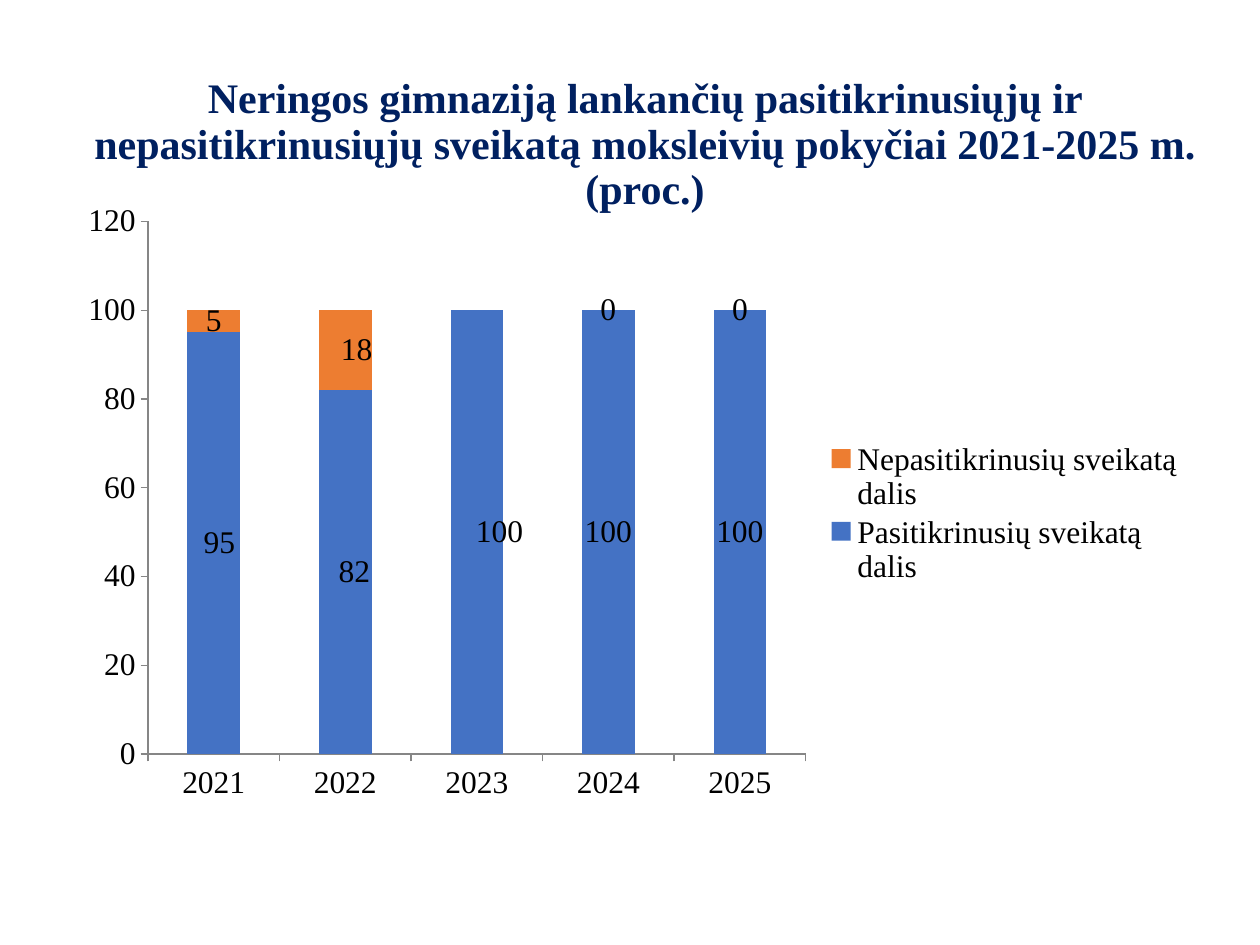
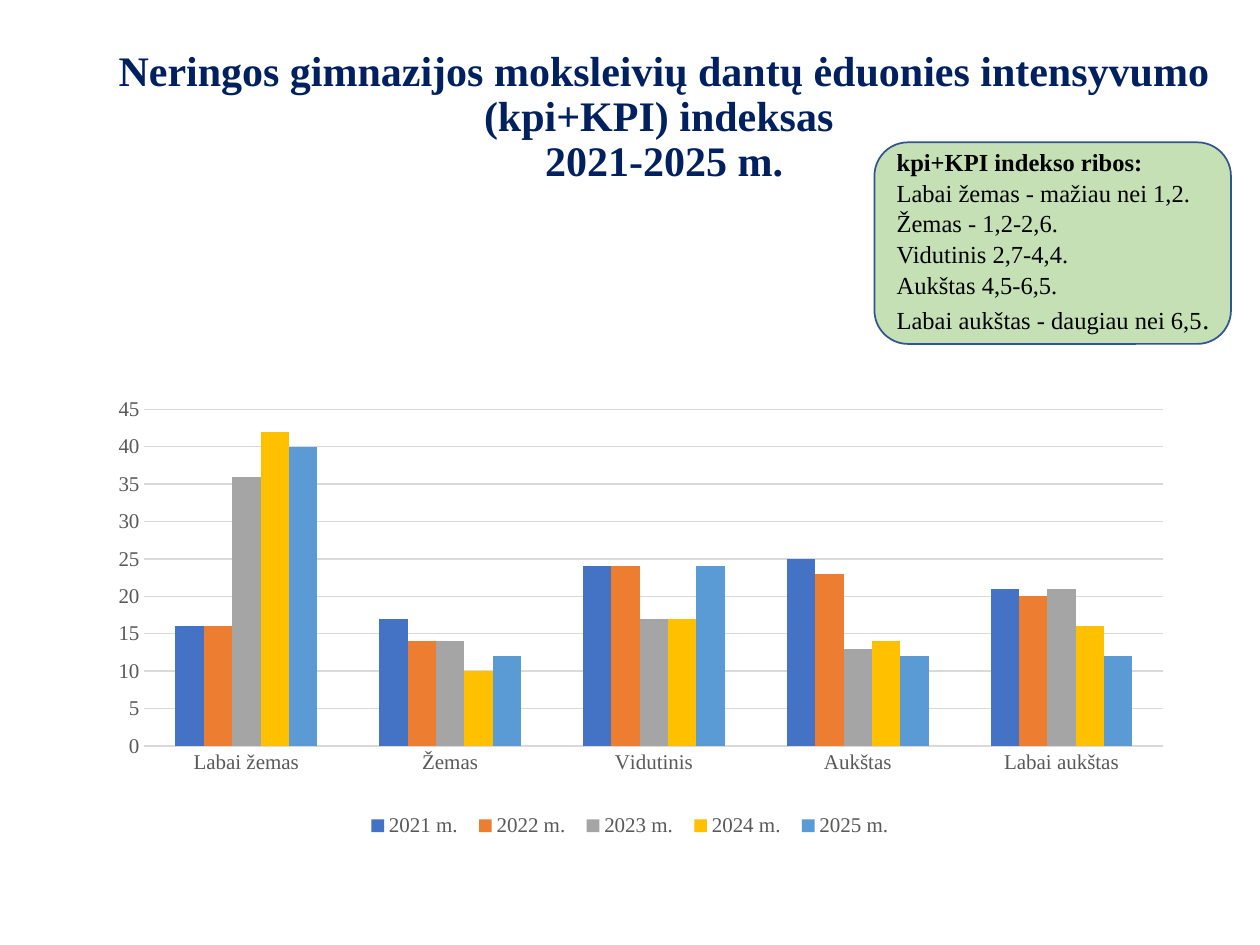
from lxml.etree import SubElement
from pptx import Presentation
from pptx.chart.data import CategoryChartData
from pptx.dml.color import RGBColor
from pptx.enum.chart import XL_CHART_TYPE, XL_LABEL_POSITION, XL_LEGEND_POSITION, XL_TICK_MARK
from pptx.enum.shapes import MSO_SHAPE
from pptx.enum.text import MSO_ANCHOR, MSO_AUTO_SIZE, PP_ALIGN
from pptx.oxml import parse_xml
from pptx.oxml.ns import nsdecls, qn
from pptx.util import Inches, Pt

FONT = "Times New Roman"
NAVY = RGBColor(0x00, 0x20, 0x60)
BLACK = RGBColor(0x00, 0x00, 0x00)
GRAY = RGBColor(0x59, 0x59, 0x59)
AXIS_GRAY = RGBColor(0x86, 0x86, 0x86)
GRID_GRAY = RGBColor(0xD9, 0xD9, 0xD9)
GREEN = RGBColor(0xC5, 0xE0, 0xB4)
BORDER_BLUE = RGBColor(0x32, 0x54, 0x91)
SERIES_COLORS = [
    RGBColor(0x44, 0x72, 0xC4), RGBColor(0xED, 0x7D, 0x31), RGBColor(0xA5, 0xA5, 0xA5),
    RGBColor(0xFF, 0xC0, 0x00), RGBColor(0x5B, 0x9B, 0xD5),
]

CHECKUP_TITLE = ["Neringos gimnaziją lankančių pasitikrinusiųjų ir nepasitikrinusiųjų "
                 "sveikatą moksleivių pokyčiai 2021-2025 m. (proc.)"]
YEARS = ["2021", "2022", "2023", "2024", "2025"]
CHECKUPS = {
    "Pasitikrinusių sveikatą dalis": [95, 82, 100, 100, 100],
    "Nepasitikrinusių sveikatą dalis": [5, 18, 0, 0, 0],
}
LABEL_SHIFTS = [{0: 0.005, 1: 0.008, 2: 0.02}, {1: 0.01}]
HIDDEN_LABEL = (1, 2)

CARIES_TITLE = ["Neringos gimnazijos moksleivių dantų ėduonies intensyvumo (kpi+KPI) indeksas ",
                "2021-2025 m."]
LEVELS = ["Labai žemas", "Žemas", "Vidutinis", "Aukštas", "Labai aukštas"]
CARIES = {
    "2021 m.": [16, 17, 24, 25, 21],
    "2022 m.": [16, 14, 24, 23, 20],
    "2023 m.": [36, 14, 17, 13, 21],
    "2024 m.": [42, 10, 17, 14, 16],
    "2025 m.": [40, 12, 24, 12, 12],
}
LIMITS = [
    [("kpi+KPI indekso ribos:", 14, True)],
    [("Labai žemas - mažiau nei 1,2.", 14, False)],
    [("Žemas - 1,2-2,6.", 14, False)],
    [("Vidutinis 2,7-4,4.", 14, False)],
    [("Aukštas 4,5-6,5.", 14, False)],
    [("Labai aukštas - daugiau nei 6,5", 14, False), (".", 16, False)],
]


def set_font(font, size, color, bold=False):
    font.name, font.size, font.bold = FONT, Pt(size), bold
    font.color.rgb = color


def place(shape, box):
    shape.left, shape.top, shape.width, shape.height = (Inches(v) for v in box)


def add_titled_slide(prs, lines, box):
    s = prs.slides.add_slide(prs.slide_layouts[5])
    place(s.shapes.title, box)
    tf = s.shapes.title.text_frame
    tf.auto_size, tf.vertical_anchor = MSO_AUTO_SIZE.NONE, MSO_ANCHOR.MIDDLE
    p = tf.paragraphs[0]
    p.alignment, p.line_spacing = PP_ALIGN.CENTER, 0.9
    for i, line in enumerate(lines):
        if i:
            p.add_line_break()
        r = p.add_run()
        r.text = line
        set_font(r.font, 24, NAVY, True)
    return s


def manual_layout(**values):
    layout = parse_xml(f"<c:layout {nsdecls('c')}><c:manualLayout/></c:layout>")
    for tag, value in values.items():
        SubElement(layout[0], qn(f"c:{tag}")).set("val", str(value))
    return layout


def area_layout(box, **target):
    x, y, w, h = box
    return manual_layout(**target, xMode="edge", yMode="edge", x=x, y=y, w=w, h=h)


def add_columns(s, kind, cats, series, box, plot_box, legend_pos, legend_box, gap, overlap,
                size, color, tick, line_color):
    data = CategoryChartData()
    data.categories = cats
    for name, values in series.items():
        data.add_series(name, values)
    chart = s.shapes.add_chart(kind, *(Inches(v) for v in box), data).chart
    chart.has_title = False
    set_font(chart.font, size, color)
    plot = chart.plots[0]
    plot.gap_width, plot.overlap, plot.vary_by_categories = gap, overlap, False
    for ser, fill in zip(plot.series, SERIES_COLORS):
        ser.format.fill.solid()
        ser.format.fill.fore_color.rgb = fill
    for axis in (chart.category_axis, chart.value_axis):
        axis.major_tick_mark, axis.minor_tick_mark = tick, XL_TICK_MARK.NONE
        axis.format.line.color.rgb = line_color
        axis.format.line.width = Pt(0.75)
        set_font(axis.tick_labels.font, size, color)
    chart.value_axis.minimum_scale = 0
    chart.value_axis.has_major_gridlines = False
    chart.has_legend = True
    legend = chart.legend
    legend.position, legend.include_in_layout = legend_pos, False
    set_font(legend.font, size, color)
    area = plot_area(chart)
    for old in area.findall(qn("c:layout")):
        area.remove(old)
    area.insert(0, area_layout(plot_box, layoutTarget="inner"))
    for old in chart.element.iter(qn("c:legend")):
        for layout in old.findall(qn("c:layout")):
            old.remove(layout)
        old.find(qn("c:legendPos")).addnext(area_layout(legend_box))
    return chart


def plot_area(chart):
    return chart.element.find(f".//{qn('c:plotArea')}")


def point_label(chart, series_index, point_index):
    label = chart.plots[0].series[series_index].points[point_index].data_label
    label.position = XL_LABEL_POSITION.CENTER
    set_font(label.font, 18, BLACK)
    ser = plot_area(chart).findall(f".//{qn('c:ser')}")[series_index]
    return next(d for d in ser.iter(qn("c:dLbl"))
                if d.find(qn("c:idx")).get("val") == str(point_index))


def label_checkups(chart):
    for i, (ser, shifts) in enumerate(zip(chart.plots[0].series, LABEL_SHIFTS)):
        labels = ser.data_labels
        labels.show_value, labels.position = True, XL_LABEL_POSITION.CENTER
        set_font(labels.font, 18, BLACK)
        for point, shift in shifts.items():
            label = point_label(chart, i, point)
            label.find(qn("c:idx")).addnext(manual_layout(x=shift, y=0))
    hidden = point_label(chart, *HIDDEN_LABEL)
    for child in list(hidden)[1:]:
        hidden.remove(child)
    SubElement(hidden, qn("c:delete")).set("val", "1")


def add_limits(s):
    sp = s.shapes.add_shape(MSO_SHAPE.ROUNDED_RECTANGLE, 0, 0, 0, 0)
    place(sp, (6.94, 1.13, 2.83, 1.6))
    sp.shadow.inherit = False
    sp.fill.solid()
    sp.fill.fore_color.rgb = GREEN
    sp.line.color.rgb = BORDER_BLUE
    sp.line.width = Pt(1)
    tf = sp.text_frame
    tf.word_wrap, tf.vertical_anchor = True, MSO_ANCHOR.MIDDLE
    tf.margin_top = tf.margin_right = 0
    for i, runs in enumerate(LIMITS):
        p = tf.add_paragraph() if i else tf.paragraphs[0]
        p.alignment, p.line_spacing = PP_ALIGN.LEFT, 1.05
        for text, size, bold in runs:
            r = p.add_run()
            r.text = text
            set_font(r.font, size, BLACK, bold)


def main():
    """Build the two slides on pupils' health checks and dental caries."""
    prs = Presentation()
    prs.slide_width, prs.slide_height = Inches(10), Inches(7.5)

    s = add_titled_slide(prs, CHECKUP_TITLE, (0.43, 0.53, 9.38, 1.25))
    chart = add_columns(
        s, XL_CHART_TYPE.COLUMN_STACKED, YEARS, CHECKUPS, (0.5, 1.55, 9, 4.95),
        (0.075, 0.042, 0.58, 0.854), XL_LEGEND_POSITION.RIGHT, (0.67, 0.39, 0.32, 0.24),
        150, 100, 18, BLACK, XL_TICK_MARK.OUTSIDE, AXIS_GRAY)
    label_checkups(chart)

    s = add_titled_slide(prs, CARIES_TITLE, (0.77, 0.31, 9, 1.25))
    add_limits(s)
    chart = add_columns(
        s, XL_CHART_TYPE.COLUMN_CLUSTERED, LEVELS, CARIES, (0.67, 2.73, 8.66, 4.25),
        (0.055, 0.122, 0.934, 0.629), XL_LEGEND_POSITION.BOTTOM, (0.25, 0.87, 0.5, 0.06),
        219, 0, 12, GRAY, XL_TICK_MARK.NONE, GRID_GRAY)
    axis = chart.value_axis
    axis.format.line.fill.background()
    axis.has_major_gridlines = True
    axis.major_gridlines.format.line.color.rgb = GRID_GRAY
    axis.major_gridlines.format.line.width = Pt(0.75)

    prs.save("out.pptx")


if __name__ == "__main__":
    main()
